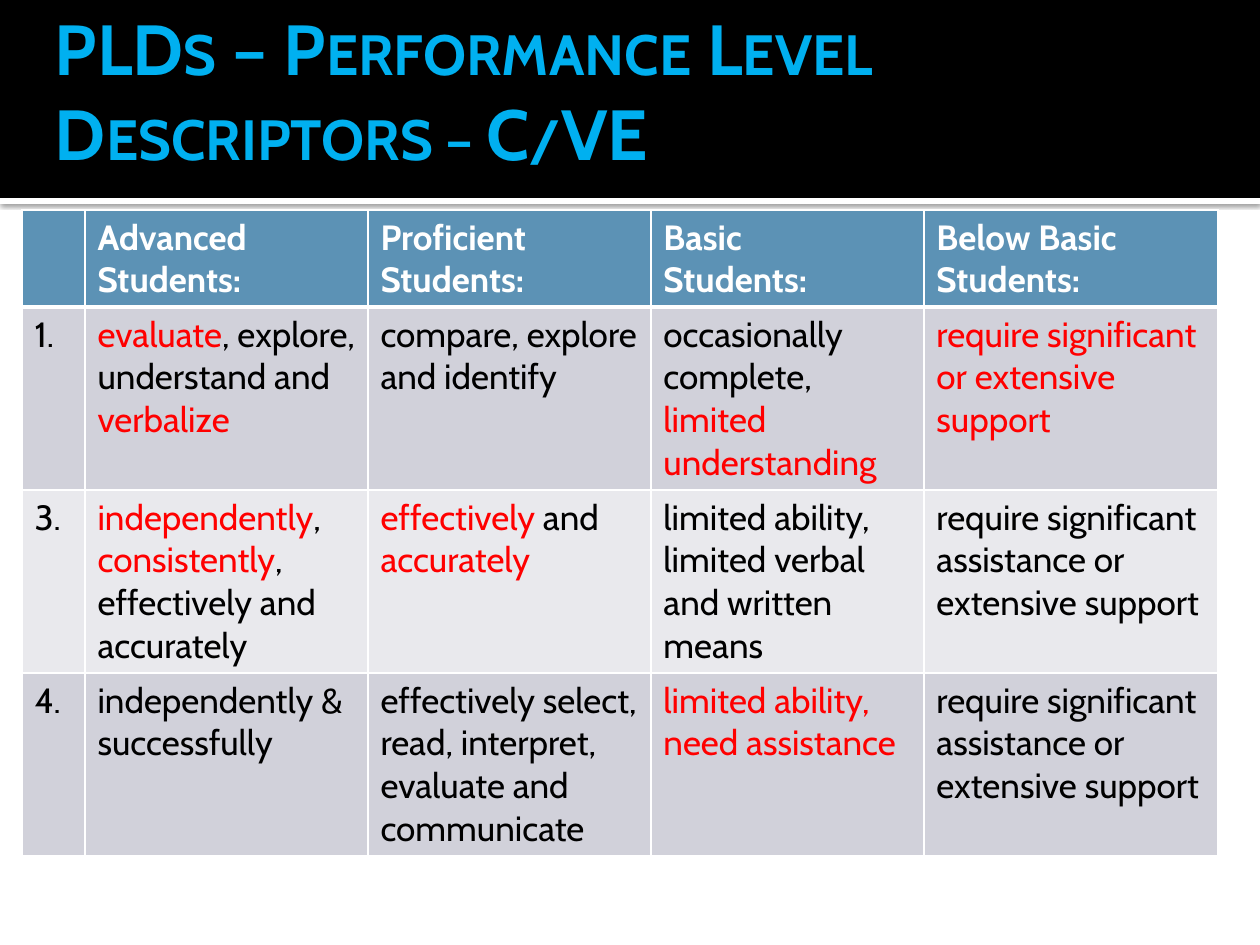
from lxml import etree
from pptx import Presentation
from pptx.dml.color import RGBColor
from pptx.enum import shapes, text
from pptx.oxml import parse_xml
from pptx.oxml.ns import nsdecls, qn
from pptx.util import Pt

PX = 914400 / 126
THEME = dict(font="Cabin", head=40.5, body=20, white="FFFFFF", black="000000",
             blue="00B0F0", red="FF0000", bar="5C92B5", odd="D1D1DA", even="E9E9ED")


def px(*vals):
    return [round(v * PX) for v in vals]


def add_run(para, words, size, color, bold=False, small=False):
    run = para.add_run()
    run.text = words
    font = run.font
    font.name, font.size, font.bold = THEME["font"], Pt(size), bold
    font.color.rgb = RGBColor.from_string(THEME[color])
    if small:
        run._r.get_or_add_rPr().set("cap", "small")


deck = Presentation()
deck.slide_width, deck.slide_height = px(1260, 945)
slide = deck.slides.add_slide(deck.slide_layouts[6])

# White rule with its shadow, then the black band
for top, high, color in ((198, 6, "white"), (0, 198, "black")):
    band = slide.shapes.add_shape(shapes.MSO_SHAPE.RECTANGLE, *px(0, top, 1260, high))
    band.fill.solid()
    band.fill.fore_color.rgb = RGBColor.from_string(THEME[color])
    band.line.fill.background()
    band.shadow.inherit = False
    if color == "white":
        band._element.spPr.find(qn("a:effectLst")).append(parse_xml(
            f'<a:outerShdw {nsdecls("a")} blurRad="31750" dist="10160" dir="5400000">'
            '<a:srgbClr val="000000"><a:alpha val="60000"/></a:srgbClr></a:outerShdw>'))

# Title: capitals at full size, the rest in small capitals
box = slide.shapes.add_textbox(*px(42, 32, 1197, 116))
frame = box.text_frame
frame.word_wrap = True
frame.vertical_anchor = text.MSO_ANCHOR.MIDDLE
frame.margin_left, frame.margin_right, frame.margin_top, frame.margin_bottom = px(13, 6, 6, 6)
title = ("PLD", "s", " – P", "erformance", " L", "evel", " D", "escriptors – C/VE")
for i, part in enumerate(title):
    add_run(frame.paragraphs[0], part, THEME["head"], "blue", True, i % 2 == 1)

# Table text: a line break starts a paragraph, stars enclose red words
help_text = "require significant assistance or extensive support"
rows = [
    ("", "Advanced Students:", "Proficient\nStudents:", "Basic\nStudents:",
     "Below Basic Students:"),
    ("1.", "*evaluate*, explore, understand and *verbalize*",
     "compare, explore and identify", "occasionally complete, *limited understanding*",
     "*require significant or extensive support*"),
    ("3.", "*independently*, *consistently*, effectively and accurately",
     "*effectively* and *accurately*",
     "limited ability, limited verbal and written means", help_text),
    ("4.", "independently & successfully",
     "effectively select, read, interpret, evaluate and communicate",
     "*limited ability, need assistance*", help_text),
]
wide = (63, 283, 283, 273, 294)
tall = (97, 183, 183, 183)
grid = slide.shapes.add_table(4, 5, *px(22, 210, sum(wide), sum(tall))).table
for col, w in zip(grid.columns, px(*wide)):
    col.width = w
for row, h in zip(grid.rows, px(*tall)):
    row.height = h

for r, row in enumerate(rows):
    fill = "bar" if r == 0 else "odd" if r % 2 else "even"
    for c, words in enumerate(row):
        cell = grid.cell(r, c)

        # White borders, heavy below the header
        props = cell._tc.get_or_add_tcPr()
        for side in "LRTB":
            heavy = (r, side) in ((0, "B"), (1, "T"))
            line = etree.SubElement(props, qn("a:ln" + side), w=str(Pt(3 if heavy else 1)))
            paint = etree.SubElement(line, qn("a:solidFill"))
            etree.SubElement(paint, qn("a:srgbClr"), val=THEME["white"])
        cell.fill.solid()
        cell.fill.fore_color.rgb = RGBColor.from_string(THEME[fill])

        # Cell text
        for n, part in enumerate(words.split("\n")):
            para = cell.text_frame.add_paragraph() if n else cell.text_frame.paragraphs[0]
            for i, bit in enumerate(part.split("*")):
                if bit:
                    color = "white" if r == 0 else "red" if i % 2 else "black"
                    add_run(para, bit, THEME["body"], color, r == 0)

deck.save("out.pptx")
